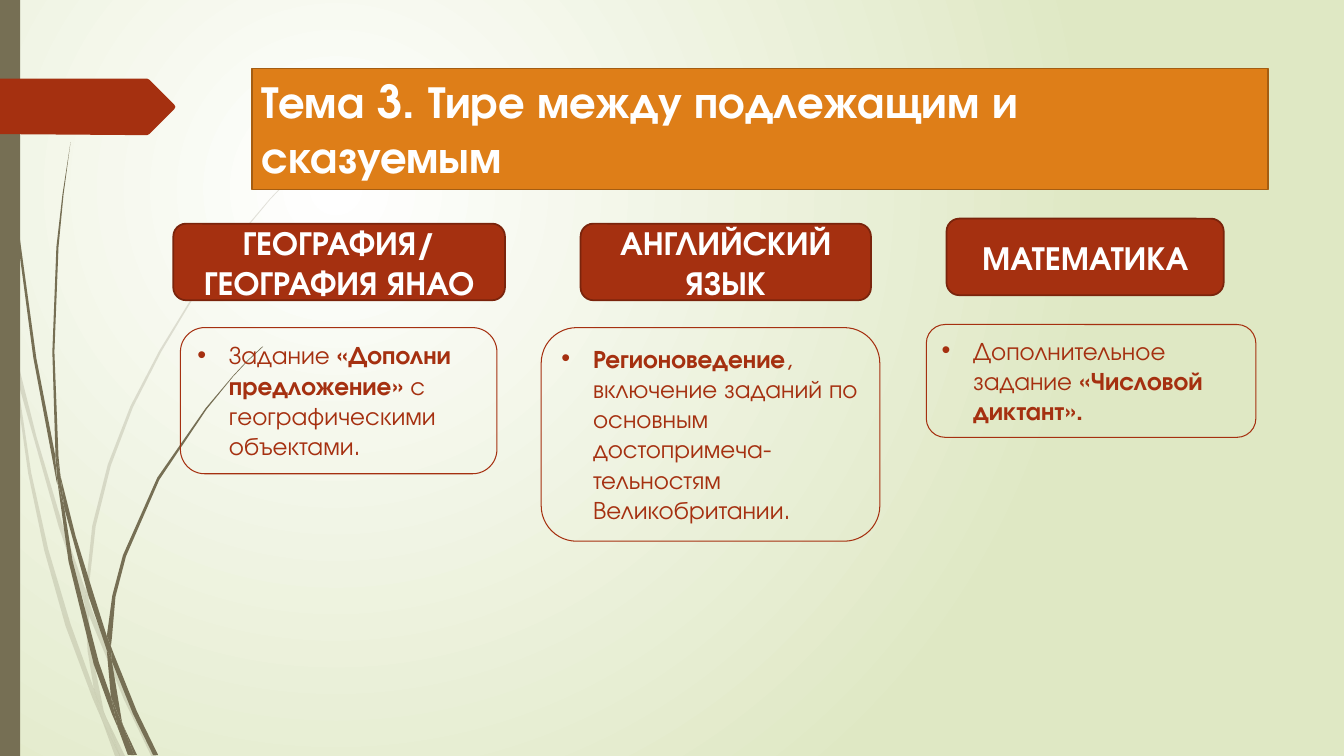
from dataclasses import dataclass
from typing import Optional

import lxml.etree
import pptx
import pptx.dml.color
import pptx.enum.shapes
import pptx.enum.text
import pptx.oxml.ns
import pptx.util

Pt = pptx.util.Pt
SHAPE = pptx.enum.shapes.MSO_SHAPE
ALIGN = pptx.enum.text.PP_ALIGN
ANCHOR = pptx.enum.text.MSO_ANCHOR
AUTOSIZE = pptx.enum.text.MSO_AUTO_SIZE
qn = pptx.oxml.ns.qn

COLORS = {
    "white": "FFFFFF",
    "meadow": "DFE8C4",
    "olive": "766F54",
    "brick": "A53010",
    "brick_edge": "7A240C",
    "orange": "DE7E18",
    "orange_edge": "A45D12",
}
FONT = "TeX Gyre Adventor"

PALE_GRASS = [
    [(7.9, 252), (6.5, 231.8), (0, 203), (0, 215.3), (7.2, 247.7)],
    [(41.8, 375.8), (60.5, 431.3), (61.2, 421.9), (44.6, 374.4), (26, 311.8), (10.1, 248.4), (12.2, 270.7)],
    [(66.2, 437), (63.4, 429.1), (63.4, 439.2), (88.6, 499.7), (108, 540), (111.6, 540), (91.4, 498.2)],
    [(85.7, 540), (89.3, 540), (75.6, 511.9)],
    [(67, 491.8), (50.4, 445.7), (34.5, 392.4), (22.3, 337.7), (12.2, 270.7), (7.9, 252), (20.2, 338.4),
     (31.6, 393.1), (46.8, 447.1), (66.2, 499), (72.7, 514.1), (71.3, 509)],
    [(60.5, 431.3), (62.6, 465.1), (67, 491.8), (69.1, 498.2), (75.6, 511.9), (74.2, 508.3), (65.5, 465.1),
     (63.4, 439.2), (63.4, 437.8)],
    [(63.4, 420.5), (68.4, 375.8), (79.2, 332.6), (95, 290.9), (115.2, 251.3), (138.2, 212.8), (164.9, 176.4),
     (193, 142.6), (208.8, 126), (224.6, 110.9), (224.6, 110.2), (208.1, 126), (193, 141.8), (164.2, 175.7),
     (137.5, 212), (113.8, 250.6), (93.2, 290.2), (77, 331.9), (65.9, 375.8), (61.2, 420.5), (61.2, 421.9),
     (63.4, 429.1)],
    [(72.7, 514.1), (82.1, 540), (85.7, 540)],
    [(63.4, 437.8), (63.4, 439.2), (63.4, 429.1), (61.2, 421.9), (60.5, 431.3)],
    [(69.1, 498.2), (67, 491.8), (71.3, 509), (72.7, 514.1), (85.7, 540), (75.6, 511.9)],
]
DARK_GRASS = [
    [(5, 79.2), (12.2, 167.8), (23.8, 255.6), (40.3, 343.4), (41, 346.3), (39.6, 329), (39.6, 326.2),
     (25.9, 255.6), (13.7, 167), (5.8, 78.5), (3.6, 34.6), (2.9, 0), (2.2, 0), (2.9, 34.6)],
    [(63.4, 426.2), (76.3, 464.4), (76.3, 455.8), (76.3, 454.3), (67, 424.8), (54, 383), (43.2, 339.8),
     (46.1, 363.6)],
    [(81.4, 467.3), (79.2, 461.5), (79.9, 472.3), (95, 509.8), (109.4, 539.3), (113, 539.3), (97.9, 508.3)],
    [(79.2, 497.5), (70.6, 473), (51.8, 400.3), (46.1, 363.6), (41, 343.4), (49, 401), (67, 474.5),
     (79.9, 509.8), (84.2, 519.8), (83.5, 516.2)],
    [(43.2, 339.8), (41.8, 326.2), (38.9, 251.3), (41.8, 176.4), (45.4, 139), (50.4, 101.5), (44.6, 139),
     (40.3, 176.4), (37.4, 251.3), (39.6, 323.3)],
    [(95.8, 539.3), (97.9, 539.3), (87.8, 517.7)],
    [(41, 343.4), (46.1, 363.6), (43.2, 339.8), (39.6, 323.3), (39.6, 326.2)],
    [(79.9, 455.8), (82.5, 426.2), (90, 397.4), (113.8, 342.7), (147.6, 292.3), (166.3, 269.3), (176.4, 258.5),
     (187.9, 247.7), (187.2, 247.7), (176.4, 257.8), (166.3, 268.6), (146.9, 291.6), (112.3, 341.3),
     (87.8, 396.7), (80.2, 425.5), (76.3, 454.3), (79.2, 461.5)],
    [(84.2, 519.8), (91.4, 539.3), (94.3, 539.3)],
    [(76.3, 464.4), (79.2, 497.5), (83.5, 508.3), (87.8, 517.7), (87.1, 515.5), (79.9, 472.3), (78.5, 468.7)],
    [(76.3, 464.4), (78.5, 468.7), (79.9, 472.3), (79.2, 461.5), (76.3, 454.3)],
    [(83.5, 508.3), (79.2, 497.5), (83.5, 516.2), (84.2, 519.8), (93.6, 539.3), (95.8, 539.3), (87.8, 517.7)],
]
FLAG = [(0, 56.2), (97.9, 56.2), (105.1, 56.2), (106.6, 56.9), (124.6, 74.9), (125.3, 76.3), (124.6, 77.8),
        (106.6, 95.8), (105.1, 96.5), (97.9, 96.5), (0, 95.8)]


@dataclass
class Look:
    fill: Optional[str] = None
    edge: Optional[str] = None
    edge_width: float = 0
    opacity: int = 100


@dataclass
class Box:
    left: float
    top: float
    width: float
    height: float


@dataclass
class Wording:
    paragraphs: list[list[tuple[str, bool]]]
    size: float
    color: str
    frame: dict
    paragraph: dict
    bulleted: bool = False


@dataclass
class Subject:
    heading_box: Box
    heading: list[str]
    task_box: Box
    task: list[tuple[str, bool]]


HEADING_LOOK = Look("brick", "brick_edge", 1.25)
TASK_LOOK = Look(None, "brick", 0.75)
HEADING_FRAME = {"word_wrap": True, "vertical_anchor": ANCHOR.MIDDLE}
TOP_FRAME = {"word_wrap": True, "vertical_anchor": ANCHOR.TOP}
TASK_FRAME = {**TOP_FRAME, "auto_size": AUTOSIZE.SHAPE_TO_FIT_TEXT}

SUBJECTS = [
    Subject(Box(123.8, 159.8, 236.9, 54.7), ["ГЕОГРАФИЯ/", "ГЕОГРАФИЯ ЯНАО"],
            Box(128.9, 234, 226.1, 104.4),
            [("Задание ", False), ("«Дополни предложение» ", True), ("с географическими объектами.", False)]),
    Subject(Box(676.1, 156.2, 198, 54.7), ["МАТЕМАТИКА"],
            Box(661.7, 231.8, 235.4, 80.6),
            [("Дополнительное задание ", False), ("«Числовой диктант».", True)]),
    Subject(Box(414.7, 159.8, 207.4, 54.7), ["АНГЛИЙСКИЙ ЯЗЫК"],
            Box(386.6, 234, 241.9, 152.6),
            [("Регионоведение", True),
             (", включение заданий по основным достопримеча-тельностям Великобритании.", False)]),
]


def rgb(name: str) -> pptx.dml.color.RGBColor:
    return pptx.dml.color.RGBColor.from_string(COLORS[name])


def set_all(target, values: dict) -> None:
    for attribute, value in values.items():
        setattr(target, attribute, value)


def apply_look(shape, look: Look) -> None:
    shape.shadow.inherit = False
    if look.fill:
        shape.fill.solid()
        shape.fill.fore_color.rgb = rgb(look.fill)
    else:
        shape.fill.background()
    if look.opacity < 100:
        tint = shape.element.spPr.find(qn("a:solidFill") + "/" + qn("a:srgbClr"))
        lxml.etree.SubElement(tint, qn("a:alpha"), val=str(look.opacity * 1000))
    if look.edge:
        shape.line.color.rgb = rgb(look.edge)
        shape.line.width = Pt(look.edge_width)
    else:
        shape.line.fill.background()


def draw_outline(slide, points: list[tuple[float, float]], look: Look) -> None:
    start, *rest = [(Pt(x), Pt(y)) for x, y in points]
    builder = slide.shapes.build_freeform(*start)
    builder.add_line_segments(rest, close=True)
    apply_look(builder.convert_to_shape(), look)


def add_bullet(paragraph) -> None:
    properties = paragraph._p.get_or_add_pPr()
    set_indent = {"marL": str(Pt(22.5)), "indent": str(-Pt(22.5))}
    properties.attrib.update(set_indent)
    lxml.etree.SubElement(properties, qn("a:buFont"), typeface="Arial")
    lxml.etree.SubElement(properties, qn("a:buChar"), char="•")


def draw_box(slide, kind, box: Box, look: Look, wording: Optional[Wording] = None) -> None:
    shape = slide.shapes.add_shape(kind, Pt(box.left), Pt(box.top), Pt(box.width), Pt(box.height))
    apply_look(shape, look)
    if wording is None:
        return
    frame = shape.text_frame
    set_all(frame, wording.frame)
    for index, pieces in enumerate(wording.paragraphs):
        paragraph = frame.add_paragraph() if index else frame.paragraphs[0]
        set_all(paragraph, wording.paragraph)
        if wording.bulleted:
            add_bullet(paragraph)
        for text, bold in pieces:
            run = paragraph.add_run()
            run.text = text
            set_all(run.font, {"name": FONT, "size": Pt(wording.size), "bold": bold})
            run.font.color.rgb = rgb(wording.color)


def paint_background(slide) -> None:
    fill = slide.background.fill
    fill.gradient()
    for stop, position, color in zip(fill.gradient_stops, (0, 1), ("white", "meadow")):
        stop.position = position
        stop.color.rgb = rgb(color)
    gradient = slide.element.find(".//" + qn("a:gradFill"))
    gradient.remove(gradient.find(qn("a:lin")))
    glow = lxml.etree.SubElement(gradient, qn("a:path"), path="circle")
    lxml.etree.SubElement(glow, qn("a:fillToRect"), l="50000", t="50000", r="100000", b="100000")


def main() -> None:
    deck = pptx.Presentation()
    set_all(deck, {"slide_width": Pt(960), "slide_height": Pt(540)})
    slide = deck.slides.add_slide(deck.slide_layouts[6])
    paint_background(slide)
    for blades, look in ((PALE_GRASS, Look("olive", opacity=20)), (DARK_GRASS, Look("olive"))):
        for blade in blades:
            draw_outline(slide, blade, look)
    draw_box(slide, SHAPE.RECTANGLE, Box(0, 0, 14.4, 540), Look("olive"))
    draw_outline(slide, FLAG, Look("brick"))
    topic = Wording([[("Тема 3. Тире между подлежащим и сказуемым", True)]], 32.4, "white",
                    TOP_FRAME, {"alignment": ALIGN.LEFT})
    draw_box(slide, SHAPE.RECTANGLE, Box(180, 49, 725.8, 86.4), Look("orange", "orange_edge", 1.25), topic)
    for subject in SUBJECTS:
        heading = Wording([[(line, True)] for line in subject.heading], 24, "white",
                          HEADING_FRAME, {"alignment": ALIGN.CENTER})
        task = Wording([subject.task], 18, "brick", TASK_FRAME, {"alignment": ALIGN.LEFT}, bulleted=True)
        draw_box(slide, SHAPE.FLOWCHART_ALTERNATE_PROCESS, subject.heading_box, HEADING_LOOK, heading)
        draw_box(slide, SHAPE.FLOWCHART_ALTERNATE_PROCESS, subject.task_box, TASK_LOOK, task)
    deck.save("out.pptx")


if __name__ == "__main__":
    main()
